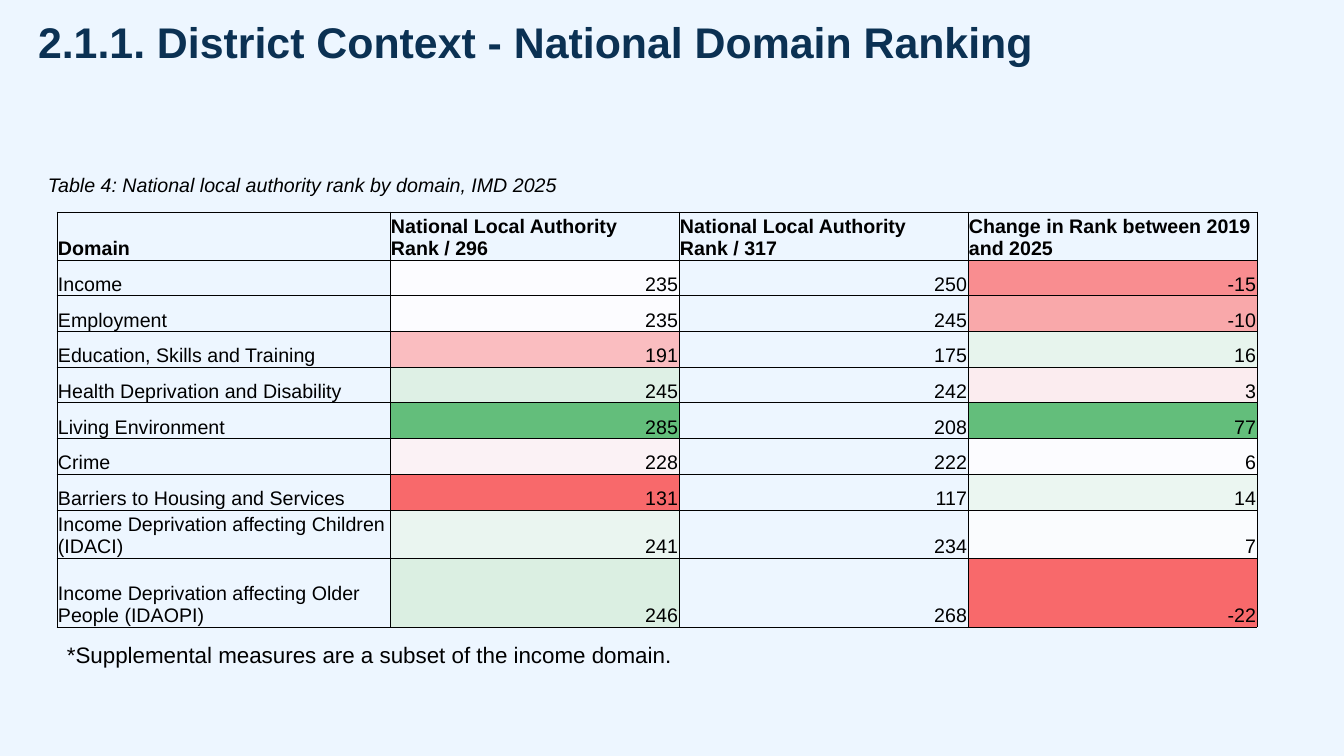
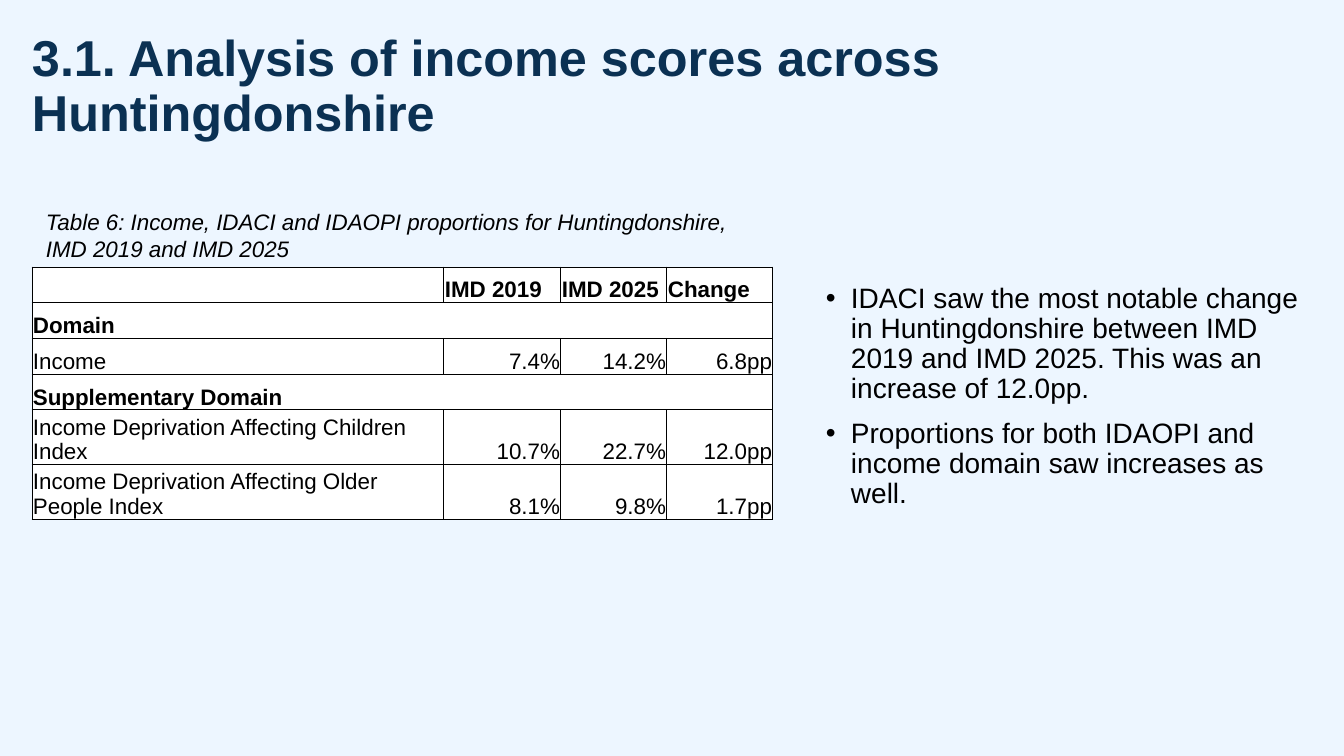
import dataclasses

import lxml.etree
import pptx
import pptx.dml.color
import pptx.enum.text
import pptx.oxml
import pptx.oxml.ns
import pptx.util


@dataclasses.dataclass(frozen=True)
class Theme:
    font: str = "Arial"
    background: str = "EDF6FF"
    title: str = "0B3153"
    text: str = "000000"
    white: str = "FFFFFF"
    table_size: int = 14
    body_size: int = 16
    bullet_size: int = 20


theme = Theme()
rgb = pptx.dml.color.RGBColor.from_string
qn = pptx.oxml.ns.qn
PP_ALIGN = pptx.enum.text.PP_ALIGN
ANCHOR = pptx.enum.text.MSO_ANCHOR
SLIDE_WIDTH, SLIDE_HEIGHT = 1344, 756
EMU_PER_PX = 12192000 / SLIDE_WIDTH


def px(length):
    return pptx.util.Emu(round(length * EMU_PER_PX))


def set_font(target, size, color=theme.text, bold=False, italic=False):
    font = target.font
    font.name, font.size = theme.font, pptx.util.Pt(size)
    font.bold, font.italic = bold, italic
    font.color.rgb = rgb(color)


deck = pptx.Presentation()
deck.slide_width, deck.slide_height = px(SLIDE_WIDTH), px(SLIDE_HEIGHT)

# Shared background
background = deck.slide_master.background.fill
background.solid()
background.fore_color.rgb = rgb(theme.background)

# Slides and titles: text, box, size, line spacing
titles = [
    ("2.1.1. District Context - National Domain Ranking",
     (38, 26, 1072, 58), 30.6, 0.8),
    ("3.1. Analysis of income scores across Huntingdonshire",
     (32, 33, 1024, 134), 36, 0.9),
]
for text, box, size, spacing in titles:
    title = deck.slides.add_slide(deck.slide_layouts[5]).shapes.title
    title.left, title.top, title.width, title.height = map(px, box)
    frame = title.text_frame
    frame.text = text
    frame.word_wrap = True
    frame.auto_size = pptx.enum.text.MSO_AUTO_SIZE.NONE
    frame.vertical_anchor = ANCHOR.TOP
    frame.margin_left = frame.margin_right = frame.margin_top = frame.margin_bottom = 0
    heading = frame.paragraphs[0]
    heading.alignment = PP_ALIGN.LEFT
    heading.line_spacing = spacing
    heading.space_after = pptx.util.Pt(6)
    set_font(heading, size, theme.title, bold=True)
ranking_slide, income_slide = deck.slides

# Captions and footnote
captions = [
    (ranking_slide, "Table 4: National local authority rank by domain, IMD 2025",
     (38, 168, 944, 34), theme.table_size, True),
    (ranking_slide, "*Supplemental measures are a subset of the income domain.",
     (57, 636, 1212, 37), theme.body_size, False),
    (income_slide, "Table 6: Income, IDACI and IDAOPI proportions for Huntingdonshire, "
     "IMD 2019 and IMD 2025", (36, 203, 737, 64), theme.body_size, True),
]
for slide, text, box, size, italic in captions:
    frame = slide.shapes.add_textbox(*map(px, box)).text_frame
    frame.word_wrap = True
    frame.text = text
    set_font(frame.paragraphs[0], size, italic=italic)

# Table contents
ranking_rows = [
    ("Domain", "National Local Authority Rank / 296",
     "National Local Authority Rank / 317", "Change in Rank between 2019 and 2025"),
    ("Income", "235", "250", "-15"),
    ("Employment", "235", "245", "-10"),
    ("Education, Skills and Training", "191", "175", "16"),
    ("Health Deprivation and Disability", "245", "242", "3"),
    ("Living Environment", "285", "208", "77"),
    ("Crime", "228", "222", "6"),
    ("Barriers to Housing and Services", "131", "117", "14"),
    ("Income Deprivation affecting Children (IDACI)", "241", "234", "7"),
    ("Income Deprivation affecting Older People (IDAOPI)", "246", "268", "-22"),
]
# Heat-map colours by column, from the first row below the header
ranking_heat = {
    1: ["FCFCFF", "FCFCFF", "FABDC0", "DEF0E5", "63BE7B", "FBF2F5", "F8696B",
        "EAF5F0", "DBEFE2"],
    3: ["F98D90", "F9A8AA", "E7F4ED", "FBECEF", "63BE7B", "FCFCFF", "EBF6F1",
        "FAFCFE", "F8696B"],
}
# A row with a single value is a section heading without inner borders
income_rows = [
    ("", "IMD 2019", "IMD 2025", "Change"),
    ("Domain",),
    ("Income", "7.4%", "14.2%", "6.8pp"),
    ("Supplementary Domain",),
    ("Income Deprivation Affecting Children Index", "10.7%", "22.7%", "12.0pp"),
    ("Income Deprivation Affecting Older People Index", "8.1%", "9.8%", "1.7pp"),
]

# Tables: slide, rows, corner, column widths, row heights, size, border, fill, heat
tables = [
    (ranking_slide, ranking_rows, (57, 212), [333, 289, 289, 289],
     [48] + [250 / 7] * 7 + [48, 69], theme.table_size, 0.5, None, ranking_heat),
    (income_slide, income_rows, (32, 267), [412, 117, 106, 106],
     [143 / 4] * 4 + [50, 51], theme.body_size, 0.75, theme.white, {}),
]
for slide, rows, corner, widths, heights, size, border, base_fill, heat in tables:
    table = slide.shapes.add_table(
        len(rows), len(widths), *map(px, (*corner, sum(widths), sum(heights)))).table
    table.first_row = table.horz_banding = False
    last_column = len(widths) - 1
    for column, width in zip(table.columns, widths):
        column.width = px(width)
    for r, (values, height) in enumerate(zip(rows, heights)):
        table.rows[r].height = px(height)
        is_section = len(values) == 1
        for c in range(len(widths)):
            cell = table.cell(r, c)
            cell.vertical_anchor = ANCHOR.BOTTOM
            cell.margin_left = cell.margin_right = cell.margin_top = px(1)
            cell.margin_bottom = 0
            # Borders come before the fill
            hidden_sides = set()
            if is_section and c > 0:
                hidden_sides.add("a:lnL")
            if is_section and c < last_column:
                hidden_sides.add("a:lnR")
            properties = cell._tc.get_or_add_tcPr()
            for side in ("a:lnL", "a:lnR", "a:lnT", "a:lnB"):
                line = lxml.etree.SubElement(
                    properties, qn(side), w=str(pptx.util.Pt(border)))
                if side in hidden_sides:
                    lxml.etree.SubElement(line, qn("a:noFill"))
                else:
                    ink = lxml.etree.SubElement(line, qn("a:solidFill"))
                    lxml.etree.SubElement(ink, qn("a:srgbClr"), val=theme.text)
            fill = heat[c][r - 1] if r and c in heat else base_fill
            if fill:
                cell.fill.solid()
                cell.fill.fore_color.rgb = rgb(fill)
            else:
                cell.fill.background()
            # Run fonts keep the row heights tight
            entry = cell.text_frame.paragraphs[0]
            entry.alignment = PP_ALIGN.RIGHT if r and c else PP_ALIGN.LEFT
            if c < len(values) and values[c]:
                run = entry.add_run()
                run.text = values[c]
                set_font(run, size, bold=r == 0 or is_section)
            else:
                set_font(entry, size)

# Findings beside the income table
findings = [
    "IDACI saw the most notable change in Huntingdonshire between IMD 2019 and "
    "IMD 2025. This was an increase of 12.0pp.",
    "Proportions for both IDAOPI and income domain saw increases as well.",
]
frame = income_slide.shapes.add_textbox(*map(px, (826, 284, 486, 256))).text_frame
frame.word_wrap = True
frame.margin_left = frame.margin_right = frame.margin_top = frame.margin_bottom = 0
for i, text in enumerate(findings):
    finding = frame.add_paragraph() if i else frame.paragraphs[0]
    finding.text = text
    properties = finding._p.get_or_add_pPr()
    properties.set("marL", str(px(25)))
    properties.set("indent", str(px(-25)))
    lxml.etree.SubElement(properties, qn("a:buFont"), typeface=theme.font)
    lxml.etree.SubElement(properties, qn("a:buChar"), char="•")
    finding.line_spacing = 0.9
    if i:
        finding.space_before = pptx.util.Pt(10)
    set_font(finding, theme.bullet_size)

deck.save("out.pptx")
